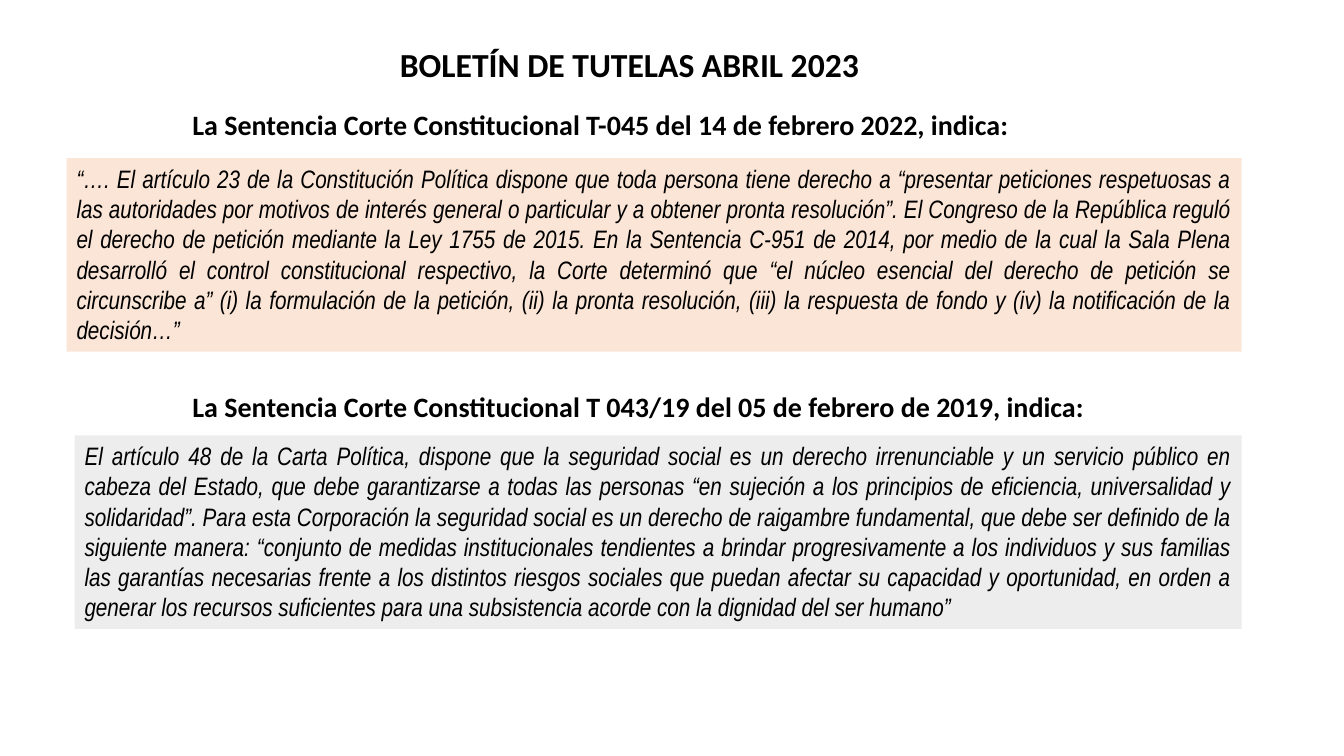
from pptx import Presentation
from pptx.dml.color import RGBColor
from pptx.enum.shapes import MSO_SHAPE as Shape
from pptx.enum.text import MSO_ANCHOR as Anchor, MSO_AUTO_SIZE as AutoSize, PP_ALIGN as Align
from pptx.util import Pt

COLORS = {"text": "000000", "peach": "FBE5D6", "gray": "EDEDED"}

TITLE = "BOLETÍN DE TUTELAS ABRIL 2023"
RULINGS = [
    {
        "heading": "La Sentencia Corte Constitucional T-045 del 14 de febrero 2022, indica:",
        "heading_top": 73.4,
        "heading_width": 724.3,
        "quote": "“…. El artículo 23 de la Constitución Política dispone que toda persona tiene "
                 "derecho a “presentar peticiones respetuosas a las autoridades por motivos de "
                 "interés general o particular y a obtener pronta resolución”. El Congreso de la "
                 "República reguló el derecho de petición mediante la Ley 1755 de 2015. En la "
                 "Sentencia C-951 de 2014, por medio de la cual la Sala Plena desarrolló el control "
                 "constitucional respectivo, la Corte determinó que “el núcleo esencial del derecho "
                 "de petición se circunscribe a” (i) la formulación de la petición, (ii) la pronta "
                 "resolución, (iii) la respuesta de fondo y (iv) la notificación de la decisión…”",
        "quote_left": 47.6,
        "quote_top": 113,
        "fill": "peach",
    },
    {
        "heading": "La Sentencia Corte Constitucional T 043/19 del 05 de febrero de 2019, indica:",
        "heading_top": 274.3,
        "heading_width": 747.4,
        "quote": "El artículo 48 de la Carta Política, dispone que la seguridad social es un derecho "
                 "irrenunciable y un servicio público en cabeza del Estado, que debe garantizarse a "
                 "todas las personas “en sujeción a los principios de eficiencia, universalidad y "
                 "solidaridad”. Para esta Corporación la seguridad social es un derecho de raigambre "
                 "fundamental, que debe ser definido de la siguiente manera: “conjunto de medidas "
                 "institucionales tendientes a brindar progresivamente a los individuos y sus "
                 "familias las garantías necesarias frente a los distintos riesgos sociales que "
                 "puedan afectar su capacidad y oportunidad, en orden a generar los recursos "
                 "suficientes para una subsistencia acorde con la dignidad del ser humano”",
        "quote_left": 53.3,
        "quote_top": 311,
        "fill": "gray",
    },
]

HEADING_LEFT, HEADING_HEIGHT = 130.3, 31.5
QUOTE_RIGHT, QUOTE_HEIGHT = 887, 138.2


def write(box, text, size, font_name, align=Align.LEFT, wrap=True, bold=False, italic=False):
    frame = box.text_frame
    frame.word_wrap = wrap
    frame.auto_size = AutoSize.SHAPE_TO_FIT_TEXT
    frame.vertical_anchor = Anchor.TOP
    para = frame.paragraphs[0]
    para.text = text
    para.alignment = align
    font = para.font
    font.name, font.size, font.bold, font.italic = font_name, Pt(size), bold, italic
    font.color.rgb = RGBColor.from_string(COLORS["text"])


def add_heading(slide, text, left, top, width, height, size, wrap=True):
    box = slide.shapes.add_textbox(Pt(left), Pt(top), Pt(width), Pt(height))
    write(box, text, size, "Calibri", wrap=wrap, bold=True)


def add_quote(slide, text, left, top, fill):
    box = slide.shapes.add_shape(
        Shape.RECTANGLE, Pt(left), Pt(top), Pt(QUOTE_RIGHT - left), Pt(QUOTE_HEIGHT))
    box.shadow.inherit = False
    box.fill.solid()
    box.fill.fore_color.rgb = RGBColor.from_string(COLORS[fill])
    box.line.fill.background()
    write(box, text, 18, "Arial Narrow", align=Align.JUSTIFY, italic=True)


def main():
    deck = Presentation()
    deck.slide_width, deck.slide_height = Pt(960), Pt(540)
    slide = deck.slides.add_slide(deck.slide_layouts[6])
    add_heading(slide, TITLE, 278.6, 28.1, 345.6, 36, 24, wrap=False)
    for ruling in RULINGS:
        add_heading(slide, ruling["heading"], HEADING_LEFT, ruling["heading_top"],
                    ruling["heading_width"], HEADING_HEIGHT, 20)
        add_quote(slide, ruling["quote"], ruling["quote_left"], ruling["quote_top"], ruling["fill"])
    deck.save("out.pptx")


if __name__ == "__main__":
    main()
